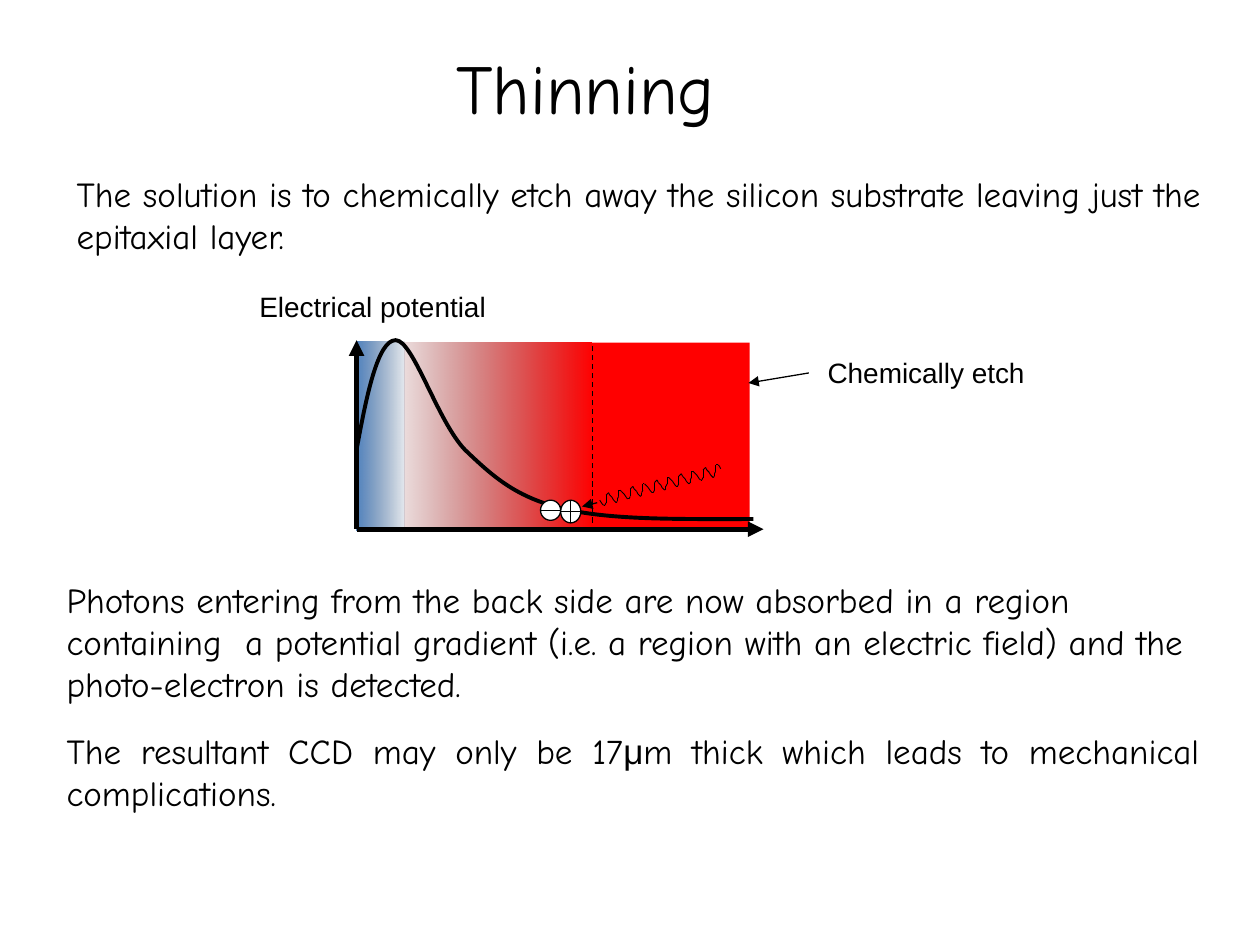
from itertools import pairwise

from lxml import etree
from pptx import Presentation
from pptx.dml.color import RGBColor
from pptx.enum import dml, shapes, text
from pptx.oxml.ns import qn
from pptx.util import Inches, Pt

BLACK = RGBColor(0x00, 0x00, 0x00)
WHITE = RGBColor(0xFF, 0xFF, 0xFF)
RED = RGBColor(0xFF, 0x00, 0x00)
DARK_RED = RGBColor(0x76, 0x00, 0x00)
BLUE = RGBColor(0x4F, 0x81, 0xBD)
DARK_BLUE = RGBColor(0x39, 0x5C, 0x87)
HAND, SANS = "Comic Neue", "Arial"


def add_line(parent, start, end, width=0.75, arrow=None, dash=None):
    line = parent.add_connector(shapes.MSO_CONNECTOR.STRAIGHT, *map(Inches, start + end))
    line.line.color.rgb = BLACK
    line.line.width = Pt(width)
    if dash:
        line.line.dash_style = dash
    if arrow:
        etree.SubElement(line.line._get_or_add_ln(), qn(f"a:{arrow}")).set("type", "triangle")
    etree.SubElement(line._element.spPr, qn("a:effectLst"))


def write_text(shape, runs, size, **frame_format):
    frame = shape.text_frame
    for name, value in frame_format.items():
        setattr(frame, name, value)
    paragraph = frame.paragraphs[0]
    paragraph.alignment = text.PP_ALIGN.LEFT
    for words, font in runs:
        run = paragraph.add_run()
        run.text = words
        for name, value in {"name": font, "size": Pt(size)}.items():
            setattr(run.font, name, value)
        run.font.color.rgb = BLACK
    return paragraph


presentation = Presentation()
presentation.slide_width, presentation.slide_height = Inches(10), Inches(7.5)
slide = presentation.slides.add_slide(presentation.slide_layouts[5])
canvas = slide.shapes

substrate = canvas.add_shape(
    shapes.MSO_SHAPE.RECTANGLE, *map(Inches, (4.69, 2.72, 1.26, 1.5)))
substrate.shadow.inherit = False
substrate.fill.solid()
substrate.fill.fore_color.rgb = RED
substrate.line.fill.background()

title = canvas.title
title_box = {"left": 3.52, "top": 0.23, "width": 3.71, "height": 0.91}
for name, value in title_box.items():
    setattr(title, name, Inches(value))
write_text(title, [("Thinning", HAND)], 40, word_wrap=True,
           auto_size=text.MSO_AUTO_SIZE.NONE, vertical_anchor=text.MSO_ANCHOR.MIDDLE)

body_texts = [
    ((0.51, 1.23, 9.21, 0.94), text.PP_ALIGN.LEFT,
     [("The solution is to chemically etch away the silicon substrate leaving just "
       "the epitaxial layer.", HAND)]),
    ((0.43, 4.62, 9.21, 0.94), text.PP_ALIGN.LEFT,
     [("Photons entering from the back side are now absorbed in a region containing  a "
       "potential gradient (i.e. a region with an electric field) and the photo-electron "
       "is detected.", HAND)]),
    ((0.43, 5.65, 9.19, 0.94), text.PP_ALIGN.JUSTIFY,
     [("The resultant CCD may only be 17", HAND), ("μ", SANS),
      ("m thick which leads to mechanical complications.", HAND)]),
]
for box, alignment, runs in body_texts:
    body = canvas.add_textbox(*map(Inches, box))
    paragraph = write_text(body, runs, 20, word_wrap=True,
                           vertical_anchor=text.MSO_ANCHOR.MIDDLE)
    paragraph.alignment = alignment

layers = [
    ((3.21, 2.72, 1.48, 1.5), (RED, 100), (DARK_RED, 14)),
    ((2.83, 2.71, 0.38, 1.5), (DARK_BLUE, 13), (BLUE, 100)),
]
for box, *stops in layers:
    layer = canvas.add_shape(shapes.MSO_SHAPE.RECTANGLE, *map(Inches, box))
    layer.rotation = 180
    layer.shadow.inherit = False
    layer.line.fill.background()
    layer.fill.gradient()
    layer.fill.gradient_angle = 0
    for stop, position, (color, opacity) in zip(layer.fill.gradient_stops, (0, 1), stops):
        stop.position = position
        stop.color.rgb = color
        if opacity < 100:
            color_element = stop._gs.find(qn("a:srgbClr"))
            etree.SubElement(color_element, qn("a:alpha")).set("val", str(opacity * 1000))

origin = (2.83, 4.2)
add_line(canvas, (2.83, 2.7), origin, 3, "headEnd")
add_line(canvas, origin, (6.06, 4.2), 3, "tailEnd")

knots = [(2.83, 3.57), (2.91, 3.13), (3, 2.7), (3.14, 2.7), (3.28, 2.7), (3.47, 3.34),
         (3.69, 3.57), (3.92, 3.79), (4.1, 3.95), (4.48, 4.04), (4.86, 4.13),
         (5.42, 4.12), (5.98, 4.12)]
start, *others = [tuple(map(Inches, knot)) for knot in knots]
builder = canvas.build_freeform(*start)
builder.add_line_segments(others, close=False)
potential = builder.convert_to_shape()
potential.shadow.inherit = False
potential.fill.background()
potential.line.color.rgb = BLACK
potential.line.width = Pt(2.25)
segments = list(potential._element.iter(qn("a:lnTo")))
for first in range(0, len(segments), 3):
    bezier = etree.Element(qn("a:cubicBezTo"))
    segments[first].addprevious(bezier)
    for segment in segments[first:first + 3]:
        bezier.append(segment[0])
        segment.getparent().remove(segment)

add_line(canvas, (4.7, 4.22), (4.7, 2.73), dash=dml.MSO_LINE.DASH)

two_periods = [
    (5.68, 3.69), (5.68, 3.71), (5.68, 3.74), (5.67, 3.76), (5.67, 3.78),
    (5.66, 3.79), (5.64, 3.77), (5.63, 3.75), (5.61, 3.73), (5.6, 3.71),
    (5.59, 3.72), (5.58, 3.73), (5.58, 3.76), (5.58, 3.79), (5.57, 3.81),
    (5.56, 3.81), (5.55, 3.8), (5.53, 3.77), (5.51, 3.75), (5.5, 3.74),
]
pitch, drop = 0.77 / 4, 0.05
photon_wave = [(5.72, 3.72), (5.71, 3.7), (5.7, 3.69)] + [
    (x - pitch * repeat, y + drop * repeat)
    for repeat in range(5) for x, y in two_periods][:-2]
photon = canvas.add_group_shape().shapes
for start, end in pairwise(photon_wave):
    add_line(photon, start, end, 0.5)
add_line(photon, (4.74, 3.99), (4.62, 4.02), arrow="tailEnd")

charges = [
    ((4.29, 3.97, 0.16, 0.16), 0, [((4.29, 4.05), (4.45, 4.05))]),
    ((4.44, 3.98, 0.18, 0.16), 270,
     [((4.53, 4.14), (4.53, 3.97)), ((4.61, 4.06), (4.45, 4.06))]),
]
for box, rotation, strokes in charges:
    charge = canvas.add_group_shape().shapes
    circle = charge.add_shape(shapes.MSO_SHAPE.OVAL, *map(Inches, box))
    circle.rotation = rotation
    circle.shadow.inherit = False
    circle.fill.solid()
    circle.fill.fore_color.rgb = WHITE
    circle.line.color.rgb = BLACK
    circle.line.width = Pt(0.75)
    for start, end in strokes:
        add_line(charge, start, end)

etch = canvas.add_group_shape().shapes
add_line(etch, (6.42, 2.96), (5.94, 3.04), arrow="tailEnd")
labels = [
    (canvas, "Electrical potential", (1.96, 2.25, 2, 0.37)),
    (etch, "Chemically etch", (6.47, 2.77, 1.77, 0.37)),
]
for parent, words, box in labels:
    label = parent.add_textbox(*map(Inches, box))
    write_text(label, [(words, SANS)], 16, word_wrap=False,
               auto_size=text.MSO_AUTO_SIZE.SHAPE_TO_FIT_TEXT)

presentation.save("out.pptx")
